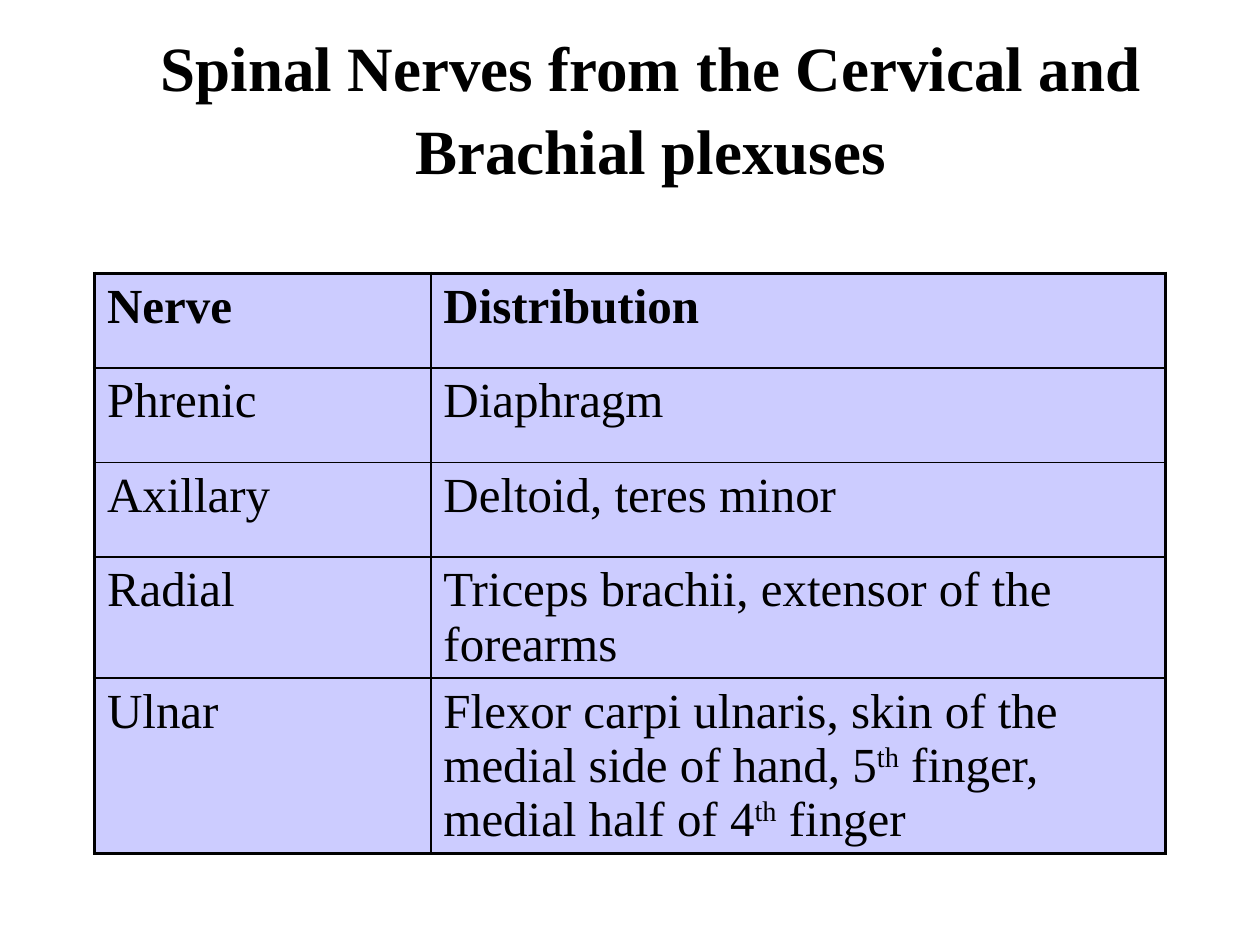
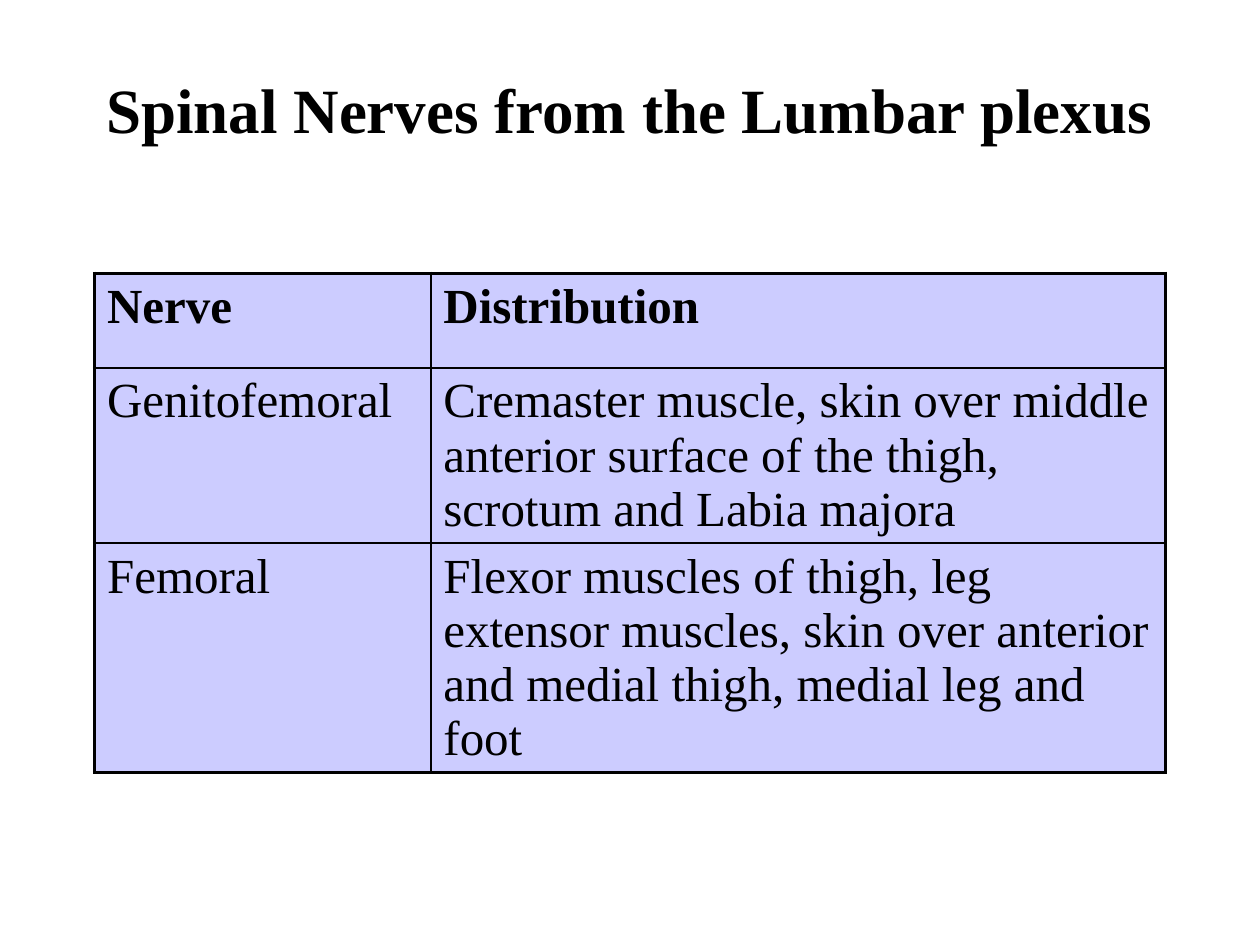
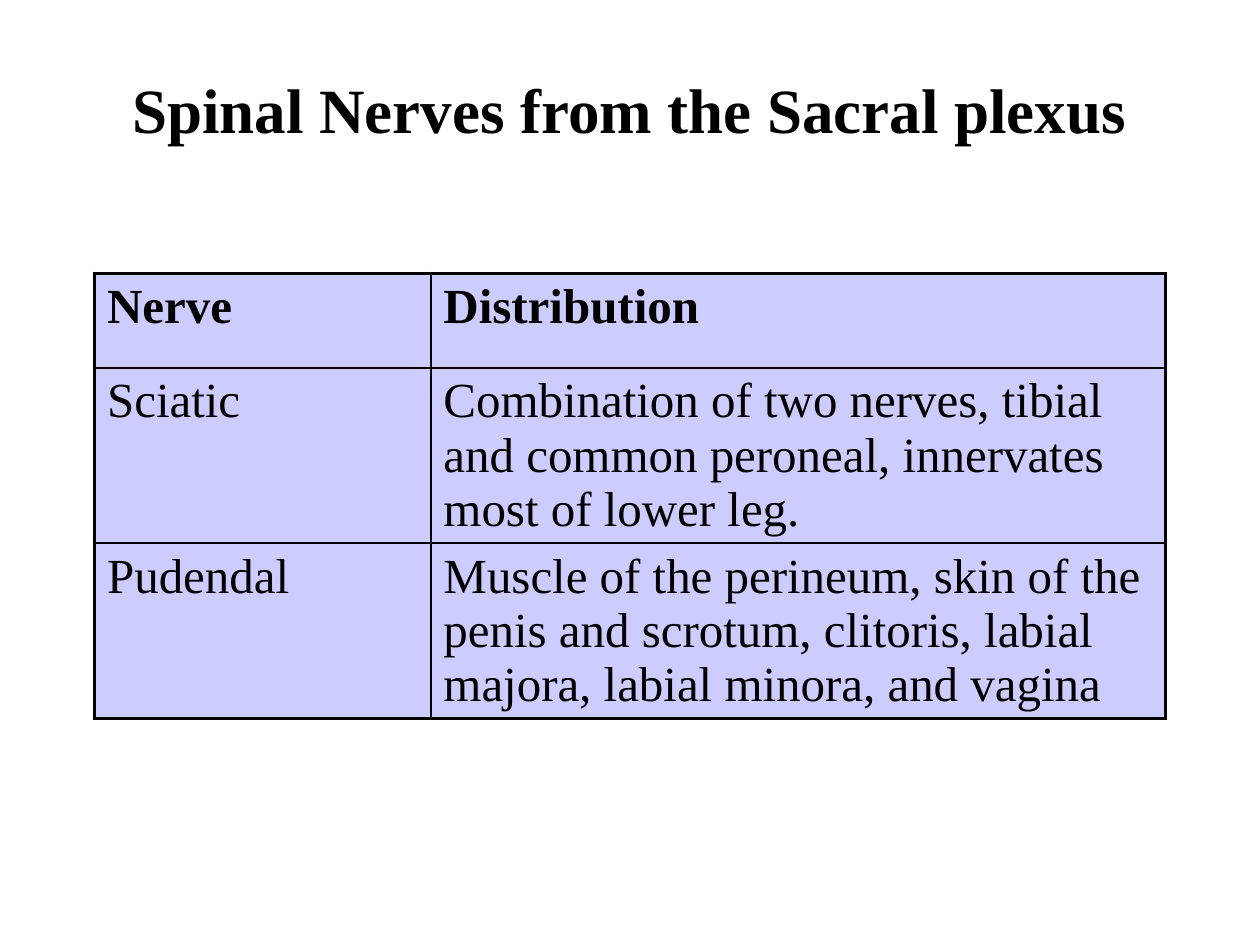
from lxml import etree
from pptx import Presentation
from pptx.dml.color import RGBColor
from pptx.enum import text
from pptx.oxml import ns
from pptx.util import Inches, Pt

BLACK = RGBColor(0x00, 0x00, 0x00)
LAVENDER = RGBColor(0xCC, 0xCC, 0xFF)
FONT = "Times New Roman"
OUTER_LINE, INNER_LINE = Pt(2.25), Pt(1)
COLUMN_WIDTHS = (2.67, 5.83)
ROW_HEIGHT = 0.75
HEADINGS = ("Nerve", "Distribution")

PLEXUSES = [
    ("Spinal Nerves from the Cervical and Brachial plexuses", 0.5, 4.78, [
        ("Phrenic", "Diaphragm"),
        ("Axillary", "Deltoid, teres minor"),
        ("Radial", "Triceps brachii, extensor of the forearms"),
        ("Ulnar", "Flexor carpi ulnaris, skin of the medial side of hand, 5^th^"
                  " finger, medial half of 4^th^ finger"),
    ]),
    ("Spinal Nerves from the Lumbar plexus", 0.33, 4.22, [
        ("Genitofemoral", "Cremaster muscle, skin over middle anterior surface "
                          "of the thigh, scrotum and Labia majora"),
        ("Femoral", "Flexor muscles of thigh, leg extensor muscles, skin over "
                    "anterior and medial thigh, medial leg and foot"),
    ]),
    ("Spinal Nerves from the Sacral plexus", 0.33, 3.75, [
        ("Sciatic", "Combination of two nerves, tibial and common peroneal, "
                    "innervates most of lower leg."),
        ("Pudendal", "Muscle of the perineum, skin of the penis and scrotum, "
                     "clitoris, labial majora, labial minora, and vagina"),
    ]),
]


def add_runs(paragraph, wording, size, bold):
    """Add styled runs, raising the parts enclosed in carets."""
    for index, part in enumerate(wording.split("^")):
        run = paragraph.add_run()
        run.text = part
        run.font.name, run.font.size, run.font.bold = FONT, Pt(size), bold
        run.font.color.rgb = BLACK
        if index % 2:
            run.font._element.set("baseline", "30000")


def place_title(slide, wording, left, top, width, height):
    """Place and format the slide's title placeholder in the given box."""
    title = slide.shapes.title
    title.left, title.top = Inches(left), Inches(top)
    title.width, title.height = Inches(width), Inches(height)
    frame = title.text_frame
    frame.word_wrap = True
    frame.auto_size = text.MSO_AUTO_SIZE.NONE
    frame.vertical_anchor = text.MSO_ANCHOR.MIDDLE
    heading = frame.paragraphs[0]
    heading.alignment = text.PP_ALIGN.CENTER
    heading.line_spacing = 1.09
    add_runs(heading, wording, 36, True)


def add_border(cell, side, width):
    """Draw one black border of a cell."""
    border = etree.SubElement(cell._tc.get_or_add_tcPr(), ns.qn(f"a:ln{side}"), w=str(width))
    fill = etree.SubElement(border, ns.qn("a:solidFill"))
    etree.SubElement(fill, ns.qn("a:srgbClr"), val=str(BLACK))


def space_before(paragraph, percent):
    """Set the space before a paragraph as a share of its line."""
    properties = paragraph._p.get_or_add_pPr()
    spacing = etree.Element(ns.qn("a:spcBef"))
    etree.SubElement(spacing, ns.qn("a:spcPct"), val=str(percent * 1000))
    properties.insert(0, spacing)


def add_nerve_table(slide, nerves, left, top, height):
    """Add the nerve and distribution table with a heavy outer frame."""
    rows = [HEADINGS, *nerves]
    frame = slide.shapes.add_table(len(rows), len(HEADINGS), Inches(left), Inches(top),
                                   Inches(sum(COLUMN_WIDTHS)), Inches(height))
    table = frame.table
    table.horz_banding = False
    for column, width in zip(table.columns, COLUMN_WIDTHS):
        column.width = Inches(width)
    for r, row in enumerate(rows):
        table.rows[r].height = Inches(ROW_HEIGHT)
        for c, wording in enumerate(row):
            cell = table.cell(r, c)
            edges = {"L": c == 0, "R": c == len(row) - 1,
                     "T": r == 0, "B": r == len(rows) - 1}
            for side, outer in edges.items():
                add_border(cell, side, OUTER_LINE if outer else INNER_LINE)
            cell.fill.solid()
            cell.fill.fore_color.rgb = LAVENDER
            paragraph = cell.text_frame.paragraphs[0]
            space_before(paragraph, 20)
            add_runs(paragraph, wording, 28, r == 0)
    frame.height = Inches(height)


def main():
    """Build one slide for each plexus."""
    deck = Presentation()
    deck.slide_width, deck.slide_height = Inches(10), Inches(7.5)
    for heading, title_left, table_height, nerves in PLEXUSES:
        slide = deck.slides.add_slide(deck.slide_layouts[5])
        place_title(slide, heading, title_left, 0.33, 9.33, 1)
        add_nerve_table(slide, nerves, 0.75, 2.17, table_height)
    deck.save("out.pptx")


if __name__ == "__main__":
    main()
